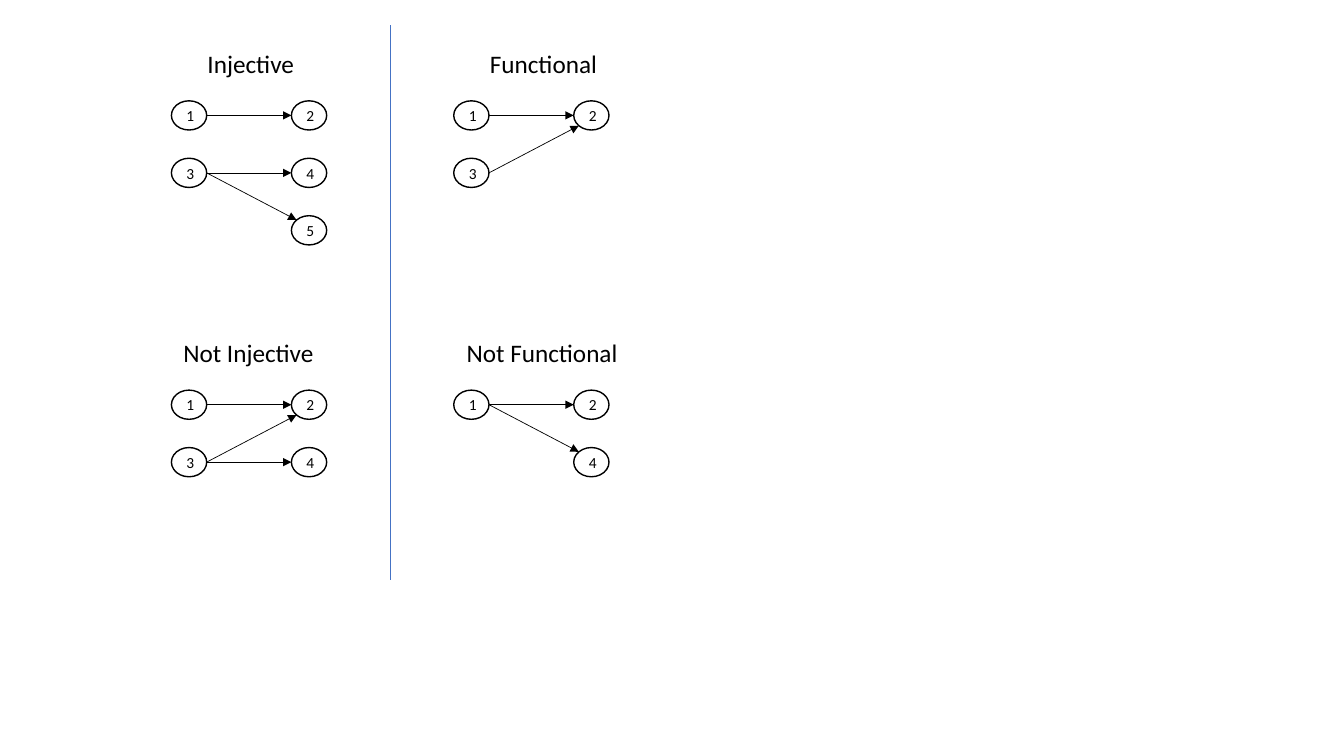
from dataclasses import dataclass
from math import cos, pi

from lxml.etree import SubElement
from pptx import Presentation
from pptx.dml.color import RGBColor
from pptx.enum.shapes import MSO_CONNECTOR, MSO_SHAPE
from pptx.enum.text import MSO_ANCHOR, MSO_AUTO_SIZE, PP_ALIGN
from pptx.oxml.ns import qn
from pptx.util import Inches, Pt


@dataclass(frozen=True)
class Theme:
    font: str = "Calibri"
    ink: RGBColor = RGBColor(0, 0, 0)
    paper: RGBColor = RGBColor(255, 255, 255)
    divider: RGBColor = RGBColor(0x44, 0x72, 0xC4)
    caption_size: float = 18
    node_size: float = 11
    outline: float = 1
    hairline: float = 0.5


THEME = Theme()

# Lengths in inches
NODE_WIDTH, NODE_HEIGHT = 0.35, 0.29
COLUMN_PITCH, ROW_PITCH = 1.19, 0.57
NODES_BELOW_CAPTION = 0.57
CAPTION_HEIGHT = 0.4
PANEL_LEFTS, PANEL_TOPS = (1.7, 4.5), (0.43, 3.3)

# Each panel: column, row, caption, its indent and width,
# source and target labels from top to bottom, arrows as (source row, target row)
PANELS = [
    (0, 0, "Injective", 0.26, 1.07, "13", "245", [(0, 0), (1, 1), (1, 2)]),
    (0, 1, "Not Injective", 0.02, 1.51, "13", "24", [(0, 0), (1, 1), (1, 0)]),
    (1, 0, "Functional", 0.26, 1.28, "13", "2", [(0, 0), (1, 0)]),
    (1, 1, "Not Functional", 0.03, 1.72, "1", "24", [(0, 0), (0, 1)]),
]


def add_span(para, text, size):
    span = para.add_run()
    span.text = text
    span.font.name = THEME.font
    span.font.size = Pt(size)
    span.font.color.rgb = THEME.ink


def add_line(slide, start, end, color, arrow=False):
    line = slide.shapes.add_connector(
        MSO_CONNECTOR.STRAIGHT, *(Inches(value) for value in (*start, *end)))
    line.line.color.rgb = color
    line.line.width = Pt(THEME.hairline)
    properties = line._element.spPr
    if arrow:
        SubElement(properties.find(qn("a:ln")), qn("a:tailEnd"), type="triangle")
    SubElement(properties, qn("a:effectLst"))


def add_caption(slide, text, left, top, width):
    box = slide.shapes.add_textbox(
        Inches(left), Inches(top), Inches(width), Inches(CAPTION_HEIGHT))
    frame = box.text_frame
    frame.word_wrap = False
    frame.auto_size = MSO_AUTO_SIZE.SHAPE_TO_FIT_TEXT
    add_span(frame.paragraphs[0], text, THEME.caption_size)


def add_node(slide, label, left, top):
    node = slide.shapes.add_shape(
        MSO_SHAPE.OVAL, Inches(left), Inches(top), Inches(NODE_WIDTH), Inches(NODE_HEIGHT))
    node.shadow.inherit = False
    node.fill.solid()
    node.fill.fore_color.rgb = THEME.paper
    node.line.color.rgb = THEME.ink
    node.line.width = Pt(THEME.outline)
    node.text_frame.vertical_anchor = MSO_ANCHOR.MIDDLE
    para = node.text_frame.paragraphs[0]
    para.alignment = PP_ALIGN.CENTER
    add_span(para, label, THEME.node_size)


def add_mapping(slide, left, top, sources, targets, arrows):
    target_left = left + COLUMN_PITCH
    for column_left, labels in ((left, sources), (target_left, targets)):
        for row, label in enumerate(labels):
            add_node(slide, label, column_left, top + row * ROW_PITCH)

    # Level arrows meet the left side; slanted ones meet the oval at 45 degrees
    diagonal = cos(pi / 4)
    for source, target in arrows:
        slant = (source > target) - (source < target)
        reach = diagonal if slant else 1
        middle = top + NODE_HEIGHT / 2
        start = (left + NODE_WIDTH, middle + source * ROW_PITCH)
        end = (target_left + NODE_WIDTH / 2 * (1 - reach),
               middle + target * ROW_PITCH + slant * NODE_HEIGHT / 2 * diagonal)
        add_line(slide, start, end, THEME.ink, arrow=True)


def add_panel(slide, left, top, caption, indent, width, sources, targets, arrows):
    add_caption(slide, caption, left + indent, top, width)
    add_mapping(slide, left, top + NODES_BELOW_CAPTION, sources, targets, arrows)


def main():
    deck = Presentation()
    deck.slide_width, deck.slide_height = Inches(13.33), Inches(7.5)
    slide = deck.slides.add_slide(deck.slide_layouts[6])

    # Four relation diagrams
    for column, row, *content in PANELS:
        add_panel(slide, PANEL_LEFTS[column], PANEL_TOPS[row], *content)

    # Divider between the two properties
    add_line(slide, (3.87, 0.25), (3.87, 5.75), THEME.divider)
    deck.save("out.pptx")


if __name__ == "__main__":
    main()
